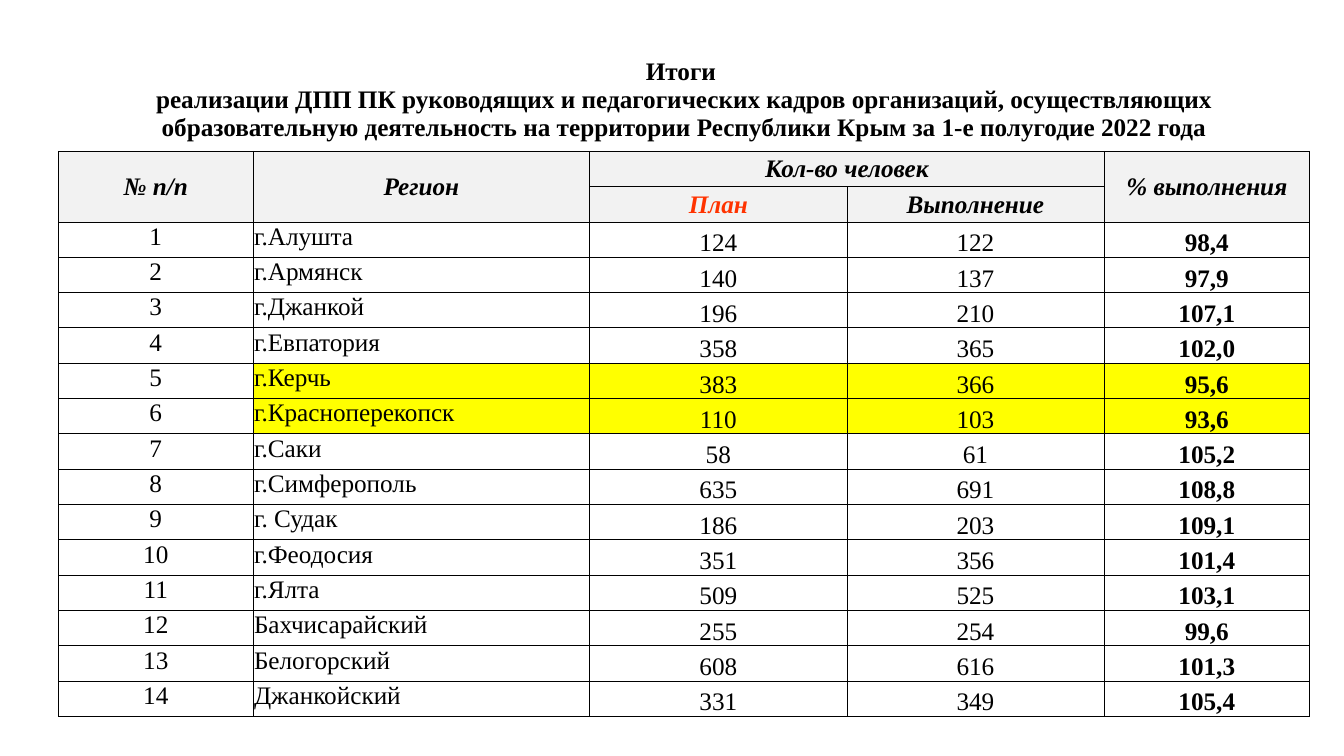
from lxml import etree
from pptx import Presentation
from pptx.dml.color import RGBColor
from pptx.enum.text import MSO_ANCHOR, PP_ALIGN
from pptx.oxml.ns import qn
from pptx.util import Inches, Pt

LEFT, CENTER = PP_ALIGN.LEFT, PP_ALIGN.CENTER
TOP, MIDDLE, BOTTOM = MSO_ANCHOR.TOP, MSO_ANCHOR.MIDDLE, MSO_ANCHOR.BOTTOM

COLORS = {"text": "000000", "border": "000000", "plan": "FF3300",
          "header": "F2F2F2", "behind": "FFFF00"}
WIDTH, HEIGHT = Inches(13.33), Inches(7.5)
TABLE_LEFT, TABLE_TOP = Inches(0.58), Inches(0.47)
TABLE_HEIGHT, HEADING_HEIGHT = Inches(6.64), Inches(1.03)
COLUMN_WIDTHS = [Inches(w) for w in (1.93, 3.34, 2.55, 2.55, 2.04)]

HEADING = ("Итоги \vреализации ДПП ПК руководящих и педагогических кадров организаций, "
           "осуществляющих образовательную деятельность на территории Республики Крым "
           "за 1-е полугодие 2022 года")
# Row, column, last row, last column, text, colour
HEADERS = [
    (1, 0, 2, 0, "№ п/п", "text"),
    (1, 1, 2, 1, "Регион", "text"),
    (1, 2, 1, 3, "Кол-во человек", "text"),
    (1, 4, 2, 4, "% выполнения", "text"),
    (2, 2, 2, 2, "План", "plan"),
    (2, 3, 2, 3, "Выполнение", "text"),
]
FIRST_REGION_ROW = 3
REGIONS = [
    ("г.Алушта", "124", "122", "98,4"),
    ("г.Армянск", "140", "137", "97,9"),
    ("г.Джанкой", "196", "210", "107,1"),
    ("г.Евпатория", "358", "365", "102,0"),
    ("г.Керчь", "383", "366", "95,6"),
    ("г.Красноперекопск", "110", "103", "93,6"),
    ("г.Саки", "58", "61", "105,2"),
    ("г.Симферополь", "635", "691", "108,8"),
    ("г. Судак", "186", "203", "109,1"),
    ("г.Феодосия", "351", "356", "101,4"),
    ("г.Ялта", "509", "525", "103,1"),
    ("Бахчисарайский", "255", "254", "99,6"),
    ("Белогорский", "608", "616", "101,3"),
    ("Джанкойский", "331", "349", "105,4"),
]
BEHIND_PLAN = {"г.Керчь", "г.Красноперекопск"}


class ReportSlide:
    font = "Times New Roman"
    size = Pt(18)
    border = Pt(0.5)
    inset = Inches(0.01)

    def __init__(self, slide):
        self.slide = slide

    def table(self, row_count):
        frame = self.slide.shapes.add_table(
            row_count, len(COLUMN_WIDTHS), TABLE_LEFT, TABLE_TOP,
            sum(COLUMN_WIDTHS), TABLE_HEIGHT)
        grid = frame.table
        grid.first_row = grid.horz_banding = False
        for column, width in zip(grid.columns, COLUMN_WIDTHS):
            column.width = width
        row_height = (TABLE_HEIGHT - HEADING_HEIGHT) // (row_count - 1)
        for index, row in enumerate(grid.rows):
            row.height = row_height if index else HEADING_HEIGHT
            for cell in row.cells:
                cell.margin_left = cell.margin_right = cell.margin_top = self.inset
                cell.margin_bottom = 0
                self.borders(cell, "LRTB" if index else "B")
                cell.fill.background()
        return grid

    def borders(self, cell, sides):
        properties = cell._tc.get_or_add_tcPr()
        for side in sides:
            line = etree.SubElement(properties, qn(f"a:ln{side}"), w=str(self.border))
            fill = etree.SubElement(line, qn("a:solidFill"))
            etree.SubElement(fill, qn("a:srgbClr"), val=COLORS["border"])

    def cell(self, cell, text, anchor=MIDDLE, align=CENTER, fill=None,
             color="text", bold=False, italic=False):
        cell.text_frame.text = text
        cell.vertical_anchor = anchor
        if fill:
            cell.fill.solid()
            cell.fill.fore_color.rgb = RGBColor.from_string(COLORS[fill])
        paragraph = cell.text_frame.paragraphs[0]
        paragraph.alignment = align
        for font in [paragraph.font] + [run.font for run in paragraph.runs]:
            font.name, font.size = self.font, self.size
            font.bold, font.italic = bold, italic
            font.color.rgb = RGBColor.from_string(COLORS[color])


def main():
    deck = Presentation()
    deck.slide_width, deck.slide_height = WIDTH, HEIGHT
    report = ReportSlide(deck.slides.add_slide(deck.slide_layouts[6]))
    results = report.table(FIRST_REGION_ROW + len(REGIONS))

    # Heading across the first row
    results.cell(0, 0).merge(results.cell(0, len(COLUMN_WIDTHS) - 1))
    report.cell(results.cell(0, 0), HEADING, bold=True)

    # Two-level column headers
    for row, column, last_row, last_column, label, color in HEADERS:
        header = results.cell(row, column)
        if (row, column) != (last_row, last_column):
            header.merge(results.cell(last_row, last_column))
        report.cell(header, label, fill="header", color=color, bold=True, italic=True)

    # Results by region
    for number, (region, plan, done, percent) in enumerate(REGIONS, 1):
        cells = results.rows[FIRST_REGION_ROW + number - 1].cells
        mark = "behind" if region in BEHIND_PLAN else None
        report.cell(cells[0], str(number), TOP)
        report.cell(cells[1], region, TOP, LEFT, mark)
        report.cell(cells[2], plan, BOTTOM, fill=mark)
        report.cell(cells[3], done, BOTTOM, fill=mark)
        report.cell(cells[4], percent, BOTTOM, fill=mark, bold=True)

    deck.save("out.pptx")


if __name__ == "__main__":
    main()
